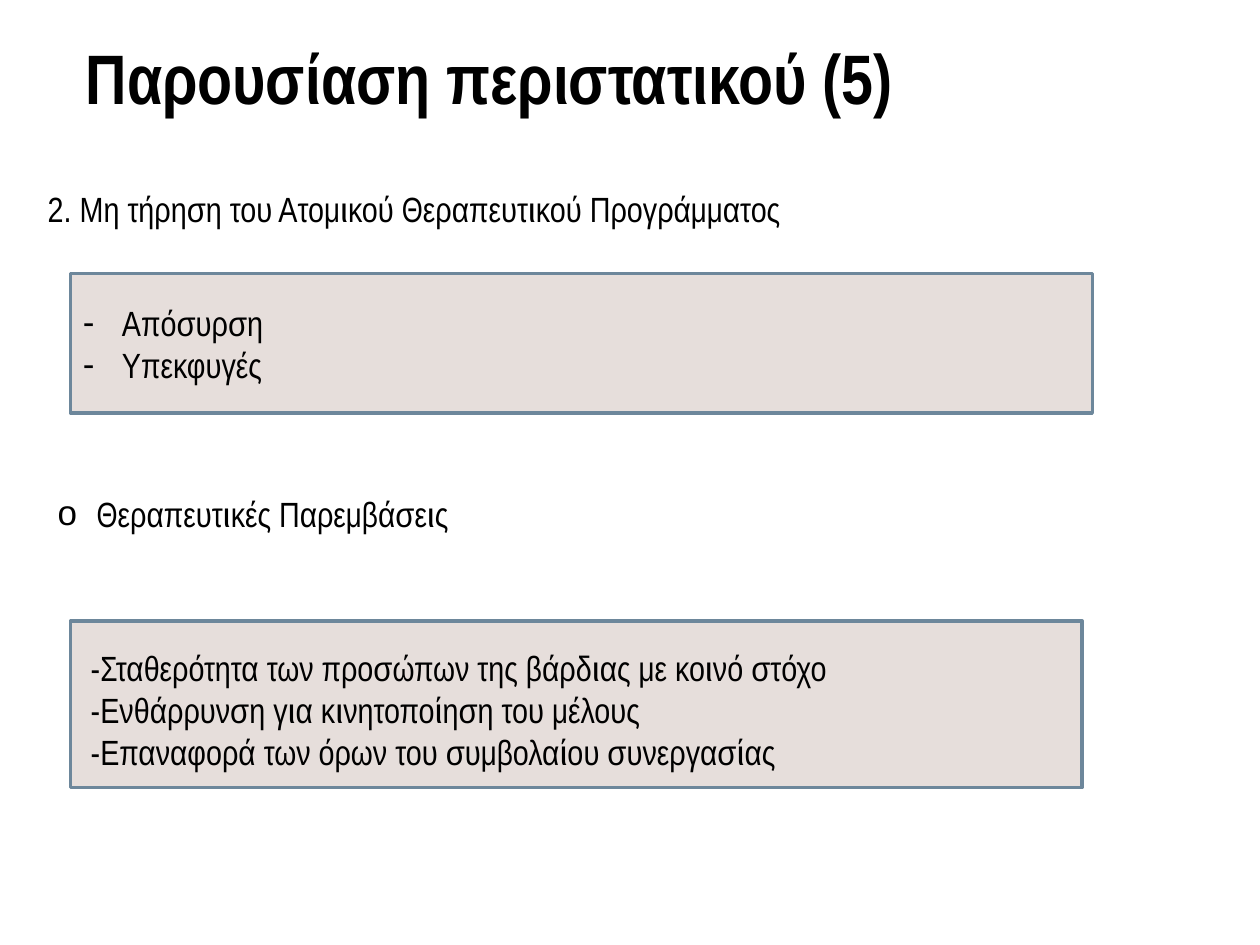
from lxml.etree import SubElement
from pptx import Presentation
from pptx.dml.color import RGBColor
from pptx.enum.shapes import MSO_SHAPE
from pptx.enum.text import MSO_ANCHOR, MSO_AUTO_SIZE, PP_ALIGN
from pptx.oxml.ns import qn
from pptx.util import Inches, Pt

COLORS = {"text": "000000", "box": "E6DEDB", "border": "6D879B"}


class SlideBuilder:
    """Holds the style and the current slide."""

    font_name = "Arial Narrow"
    bullet_font = "Arial"
    text_size = 20
    title_size = 40
    bullet_indent = 0.31

    def __init__(self, slide):
        self.slide = slide

    def color(self, name):
        return RGBColor.from_string(COLORS[name])

    def place(self, shape, left, top, width, height):
        shape.left, shape.top = Inches(left), Inches(top)
        shape.width, shape.height = Inches(width), Inches(height)

    def set_bullet(self, paragraph, bullet):
        properties = paragraph._p.get_or_add_pPr()
        indent = Inches(self.bullet_indent) if bullet else 0
        properties.set("marL", str(indent))
        properties.set("indent", str(-indent))
        if bullet:
            SubElement(properties, qn("a:buFont"), typeface=self.bullet_font)
            SubElement(properties, qn("a:buChar"), char=bullet)
        else:
            SubElement(properties, qn("a:buNone"))

    def set_text(self, shape, lines, bullet=None, size=text_size, bold=False,
                 anchor=MSO_ANCHOR.TOP):
        frame = shape.text_frame
        frame.text = "\n".join(lines)
        frame.word_wrap = True
        frame.auto_size = MSO_AUTO_SIZE.NONE
        frame.vertical_anchor = anchor
        for paragraph in frame.paragraphs:
            paragraph.alignment = PP_ALIGN.LEFT
            paragraph.space_before = Pt(0)
            self.set_bullet(paragraph, bullet)
            for run in paragraph.runs:
                run.font.name = self.font_name
                run.font.size = Pt(size)
                run.font.bold = bold
                run.font.color.rgb = self.color("text")

    def title(self, text, *place):
        shape = self.slide.shapes.title
        self.place(shape, *place)
        self.set_text(shape, [text], size=self.title_size, bold=True,
                      anchor=MSO_ANCHOR.MIDDLE)

    def body(self, lines, *place):
        shape = self.slide.placeholders[1]
        self.place(shape, *place)
        self.set_text(shape, lines)
        # Bring the list in front of its box
        shape.element.getparent().append(shape.element)

    def label(self, text, *place, bullet=None):
        shape = self.slide.shapes.add_textbox(*map(Inches, place))
        self.set_text(shape, [text], bullet)

    def box(self, *place, lines=(), bullet=None):
        shape = self.slide.shapes.add_shape(MSO_SHAPE.RECTANGLE, *map(Inches, place))
        shape.shadow.inherit = False
        shape.fill.solid()
        shape.fill.fore_color.rgb = self.color("box")
        shape.line.color.rgb = self.color("border")
        shape.line.width = Pt(2)
        if lines:
            self.set_text(shape, lines, bullet, anchor=MSO_ANCHOR.MIDDLE)


def main():
    presentation = Presentation()
    presentation.slide_width = Inches(10)
    presentation.slide_height = Inches(7.5)
    builder = SlideBuilder(presentation.slides.add_slide(presentation.slide_layouts[1]))

    # Title
    builder.title("Παρουσίαση περιστατικού (5)", 0.58, 0.02, 9.42, 1.17)

    # Problem and its forms
    builder.box(0.56, 2.17, 8.11, 1.11, lines=["Απόσυρση", "Υπεκφυγές"], bullet="-")
    builder.label("2. Μη τήρηση του Ατομικού Θεραπευτικού Προγράμματος",
                  0.28, 1.44, 7.22, 0.44)

    # Interventions
    builder.box(0.56, 4.93, 8.03, 1.32)
    builder.label("Θεραπευτικές Παρεμβάσεις", 0.36, 3.86, 7.87, 0.44, bullet="o")
    builder.body(
        ["-Σταθερότητα των προσώπων της βάρδιας με κοινό στόχο",
         "-Ενθάρρυνση για κινητοποίηση του μέλους",
         "-Επαναφορά των όρων του συμβολαίου συνεργασίας"],
        0.62, 5.08, 7.66, 1.72)

    presentation.save("out.pptx")


if __name__ == "__main__":
    main()
